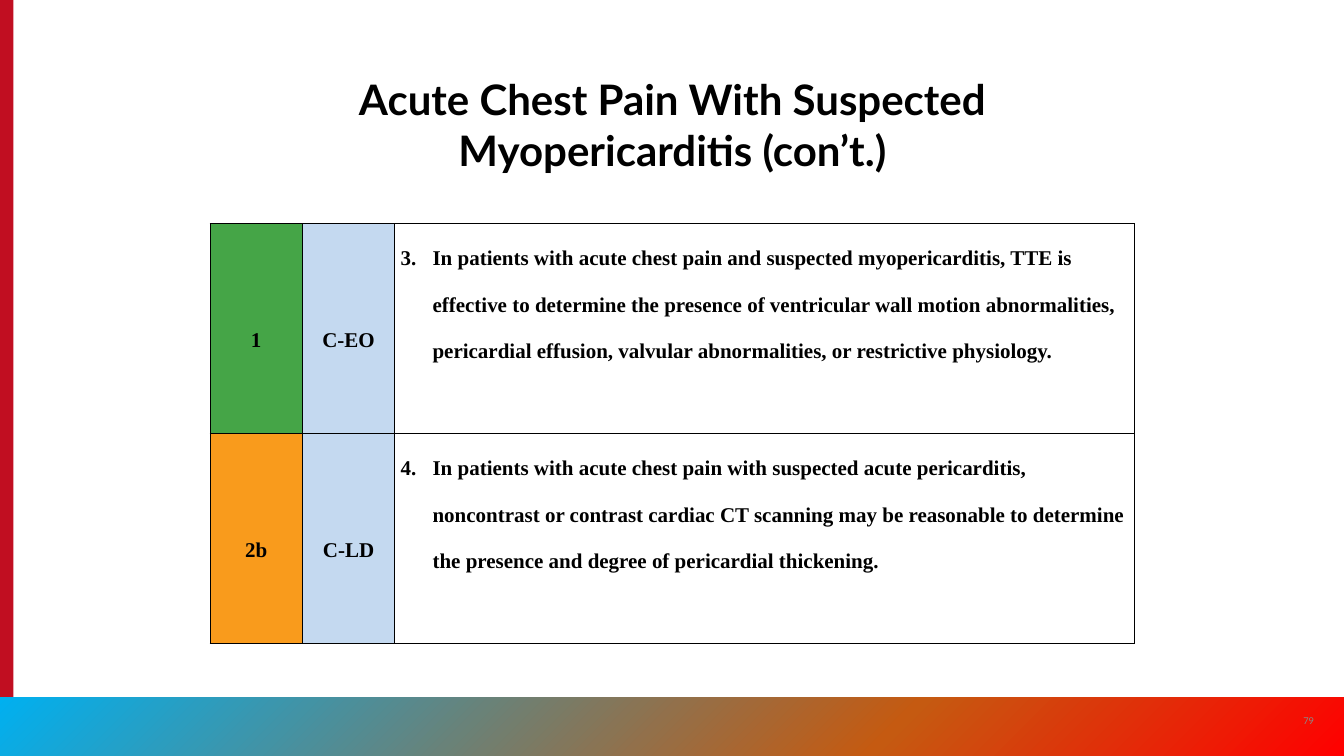
"""Build the slide of recommendations for suspected myopericarditis."""
from copy import deepcopy
from dataclasses import dataclass

from lxml import etree
from pptx import Presentation
from pptx.dml.color import RGBColor
from pptx.enum.shapes import MSO_SHAPE
from pptx.enum.text import MSO_ANCHOR, MSO_AUTO_SIZE, PP_ALIGN
from pptx.oxml.ns import qn
from pptx.util import Inches, Pt

RECTANGLE = MSO_SHAPE.RECTANGLE
TOP, MIDDLE = MSO_ANCHOR.TOP, MSO_ANCHOR.MIDDLE
CENTER, LEFT = PP_ALIGN.CENTER, PP_ALIGN.LEFT
NO_FIT = MSO_AUTO_SIZE.NONE

BLACK = RGBColor(0x00, 0x00, 0x00)
GREY = RGBColor(0x8A, 0x8B, 0x8A)
CRIMSON = RGBColor(0xC1, 0x0E, 0x21)
GREEN = RGBColor(0x45, 0xA5, 0x47)
ORANGE = RGBColor(0xF9, 0x9B, 0x1C)
PALE_BLUE = RGBColor(0xC4, 0xD9, 0xF0)
SKY = RGBColor(0x00, 0xB0, 0xF0)
RUST = RGBColor(0xC5, 0x5A, 0x11)
RED = RGBColor(0xFF, 0x00, 0x00)

WIDTH, HEIGHT = Inches(16), Inches(9)
COLUMN, ROW = WIDTH // 160, HEIGHT // 90
HEADING_FONT, TABLE_FONT = "Lato", "Times New Roman"
TABLE_COLUMNS = (11, 11, 88)
TABLE_ROW = 25
FOOTER_STOPS = ((0, SKY), (0.66, RUST), (1, RED))


@dataclass(frozen=True)
class Area:
    """Hold a place on the grid, in columns and rows."""

    left: float
    top: float
    width: float
    height: float

    def lengths(self) -> tuple[int, int, int, int]:
        """Return left, top, width and height as slide lengths."""
        return (int(self.left * COLUMN), int(self.top * ROW),
                int(self.width * COLUMN), int(self.height * ROW))


@dataclass(frozen=True)
class Recommendation:
    """Hold one row of the table."""

    strength: str
    strength_color: RGBColor
    evidence: str
    number: int
    wording: str


SIDE_BAR = Area(0, 0, 1.6, 90)
FOOTER = Area(0, 83, 160, 7)
PAGE_NUMBER = Area(153.4, 83.4, 4.8, 4.8)
TITLE = Area(24.1, 8.3, 111.9, 12.6)
TABLE = Area(25, 26.65, sum(TABLE_COLUMNS), 2 * TABLE_ROW)

RECOMMENDATIONS = (
    Recommendation(
        "1", GREEN, "C-EO", 3,
        "In patients with acute chest pain and suspected myopericarditis, TTE is "
        "effective to determine the presence of ventricular wall motion abnormalities, "
        "pericardial effusion, valvular abnormalities, or restrictive physiology."),
    Recommendation(
        "2b", ORANGE, "C-LD", 4,
        "In patients with acute chest pain with suspected acute pericarditis, "
        "noncontrast or contrast cardiac CT scanning may be reasonable to determine "
        "the presence and degree of pericardial thickening."),
)


def add_text(para, text: str, font: str, size: float, color: RGBColor,
             bold: bool, align: PP_ALIGN) -> None:
    """Add one formatted run to a paragraph."""
    para.alignment = align
    span = para.add_run()
    span.text = text
    span.font.name = font
    span.font.size = Pt(size)
    span.font.bold = bold
    span.font.color.rgb = color


def add_bar(page, area: Area):
    """Add a rectangle without line or shadow."""
    bar = page.shapes.add_shape(RECTANGLE, *area.lengths())
    bar.shadow.inherit = False
    bar.line.fill.background()
    return bar


def fill_gradient(bar, stops: tuple, angle: float) -> None:
    """Fill a bar with a linear gradient of the given stops."""
    bar.fill.gradient()
    bar.fill.gradient_angle = angle
    stop_list = bar.fill.gradient_stops
    first = next(bar.element.iter(qn("a:gs")))
    for _ in range(len(stops) - len(stop_list)):
        first.addnext(deepcopy(first))
    for stop, (position, color) in zip(bar.fill.gradient_stops, stops):
        stop.position = position
        stop.color.rgb = color


def add_borders(cell) -> None:
    """Draw a black line on every side of a cell."""
    properties = cell._tc.get_or_add_tcPr()
    for side in ("a:lnL", "a:lnR", "a:lnT", "a:lnB"):
        line = etree.SubElement(properties, qn(side), w=str(Pt(1)))
        solid = etree.SubElement(line, qn("a:solidFill"))
        etree.SubElement(solid, qn("a:srgbClr"), val=str(BLACK))


def number_paragraph(para, start: int) -> None:
    """Give a paragraph a hanging automatic number."""
    properties = para._p.get_or_add_pPr()
    hanging = Inches(0.38)
    properties.set("marL", str(hanging))
    properties.set("indent", str(-hanging))
    etree.SubElement(properties, qn("a:buAutoNum"),
                     type="arabicPeriod", startAt=str(start))


def fill_cell(cell, text: str, color: RGBColor | None = None,
              number: int | None = None) -> None:
    """Format one cell, as a coloured label or as a numbered statement."""
    add_borders(cell)
    if color is None:
        cell.fill.background()
    else:
        cell.fill.solid()
        cell.fill.fore_color.rgb = color
    cell.margin_left = cell.margin_right = Inches(0.07)
    cell.margin_top = cell.margin_bottom = 0
    cell.vertical_anchor = MIDDLE if number is None else TOP
    para = cell.text_frame.paragraphs[0]
    if number is not None:
        number_paragraph(para, number)
    para.line_spacing = 2.0
    add_text(para, text, TABLE_FONT, 18, BLACK, True,
             CENTER if number is None else LEFT)


def add_recommendations(page) -> None:
    """Add the table of recommendations."""
    table = page.shapes.add_table(
        len(RECOMMENDATIONS), len(TABLE_COLUMNS), *TABLE.lengths()).table
    table.first_row = table.horz_banding = False
    for column, width in zip(table.columns, TABLE_COLUMNS):
        column.width = width * COLUMN
    for row, item in zip(table.rows, RECOMMENDATIONS):
        row.height = TABLE_ROW * ROW
        strength, evidence, statement = row.cells
        fill_cell(strength, item.strength, item.strength_color)
        fill_cell(evidence, item.evidence, PALE_BLUE)
        fill_cell(statement, item.wording, number=item.number)


def main() -> None:
    """Build and save the deck."""
    deck = Presentation()
    deck.slide_width, deck.slide_height = WIDTH, HEIGHT
    page = deck.slides.add_slide(deck.slide_layouts.get_by_name("Title Only"))

    side_bar = add_bar(page, SIDE_BAR)
    side_bar.fill.solid()
    side_bar.fill.fore_color.rgb = CRIMSON
    fill_gradient(add_bar(page, FOOTER), FOOTER_STOPS, 315)

    title = page.shapes.title
    title.left, title.top, title.width, title.height = TITLE.lengths()
    number_box = page.shapes.add_textbox(*PAGE_NUMBER.lengths())
    for box, anchor in ((title, TOP), (number_box, MIDDLE)):
        box.text_frame.word_wrap = True
        box.text_frame.auto_size = NO_FIT
        box.text_frame.vertical_anchor = anchor
    add_text(title.text_frame.paragraphs[0],
             "Acute Chest Pain With Suspected Myopericarditis (con’t.)",
             HEADING_FONT, 36, BLACK, True, CENTER)
    add_text(number_box.text_frame.paragraphs[0], "79",
             HEADING_FONT, 8, GREY, False, CENTER)
    add_recommendations(page)
    deck.save("out.pptx")


if __name__ == "__main__":
    main()
